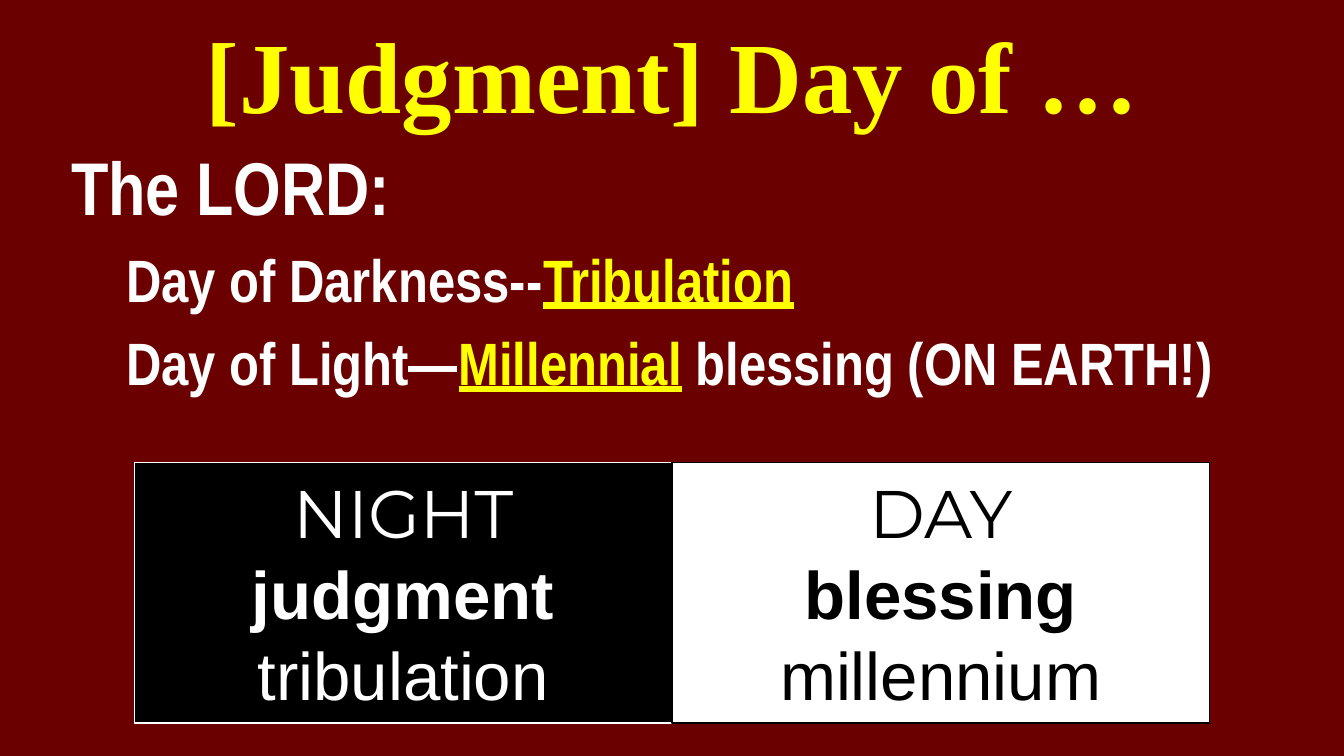
from pptx import Presentation
from pptx.dml.color import RGBColor
from pptx.enum.shapes import MSO_SHAPE
from pptx.enum.text import MSO_ANCHOR, PP_ALIGN
from pptx.util import Inches, Pt

SLIDE_WIDTH = 10
SLIDE_HEIGHT = SLIDE_WIDTH * 9 / 16
BACKGROUND, WHITE, BLACK, YELLOW = "6A0000", "FFFFFF", "000000", "FFFF00"
TITLE = "[Judgment] Day of …"
BODY = [
    (40, 0.1, 0, [("The LORD:", False)]),
    (32, 0.82, -0.31, [("Day of Darkness--", False), ("Tribulation", True)]),
    (32, 0.82, -0.31, [("Day of Light—", False), ("Millennial", True),
                       (" blessing (ON EARTH!)", False)]),
]
PANELS = [
    (BLACK, WHITE, ["NIGHT", "judgment", "tribulation"]),
    (WHITE, BLACK, ["DAY", "blessing", "millennium"]),
]
PANEL_STYLES = [("Montserrat", False), ("Arial", True), ("Arial", False)]
PANEL_LEFT, PANEL_TOP, PANEL_WIDTH, PANEL_HEIGHT = 1, 3.44, 4, 1.94


def color(value):
    return RGBColor.from_string(value)


def format_run(run, font_name, size, font_color, bold, underline=False):
    font = run.font
    font.name = font_name
    font.size = Pt(size)
    font.bold = bold
    font.underline = underline
    font.color.rgb = color(font_color)


def add_text_box(slide, left, top, width, height):
    shape = slide.shapes.add_textbox(
        Inches(left), Inches(top), Inches(width), Inches(height))
    shape.text_frame.word_wrap = True
    return shape.text_frame


def add_title(slide):
    text_frame = add_text_box(slide, 0.25, 0.1, 9.5, 0.89)
    text_frame.vertical_anchor = MSO_ANCHOR.MIDDLE
    text_frame.text = TITLE
    paragraph = text_frame.paragraphs[0]
    paragraph.alignment = PP_ALIGN.CENTER
    format_run(paragraph.runs[0], "Times New Roman", 54, YELLOW, True)


def add_body(slide):
    text_frame = add_text_box(slide, 0.33, 1, 9.42, 4.31)
    for index, (size, margin, indent, parts) in enumerate(BODY):
        paragraph = text_frame.add_paragraph() if index else text_frame.paragraphs[0]
        if index:
            paragraph.level = 1
            paragraph.space_before = Pt(6.4)
        properties = paragraph._p.get_or_add_pPr()
        properties.set("marL", str(Inches(margin)))
        properties.set("indent", str(Inches(indent)))
        for text, highlighted in parts:
            run = paragraph.add_run()
            run.text = text
            format_run(run, "Arial Narrow", size,
                       YELLOW if highlighted else WHITE, True, highlighted)


def add_panel(slide, column, fill_color, text_color, lines):
    shape = slide.shapes.add_shape(
        MSO_SHAPE.RECTANGLE, Inches(PANEL_LEFT + column * PANEL_WIDTH),
        Inches(PANEL_TOP), Inches(PANEL_WIDTH), Inches(PANEL_HEIGHT))
    shape.shadow.inherit = False
    shape.fill.solid()
    shape.fill.fore_color.rgb = color(fill_color)
    shape.line.color.rgb = color(text_color)
    shape.line.width = Pt(0.75)
    text_frame = shape.text_frame
    text_frame.word_wrap = False
    text_frame.vertical_anchor = MSO_ANCHOR.MIDDLE
    text_frame.text = "\n".join(lines)
    for paragraph, (font_name, bold) in zip(text_frame.paragraphs, PANEL_STYLES):
        paragraph.alignment = PP_ALIGN.CENTER
        format_run(paragraph.runs[0], font_name, 36, text_color, bold)


def main():
    presentation = Presentation()
    presentation.slide_width = Inches(SLIDE_WIDTH)
    presentation.slide_height = Inches(SLIDE_HEIGHT)
    slide = presentation.slides.add_slide(presentation.slide_layouts[6])
    slide.background.fill.solid()
    slide.background.fill.fore_color.rgb = color(BACKGROUND)
    add_title(slide)
    add_body(slide)
    for column, panel in enumerate(PANELS):
        add_panel(slide, column, *panel)
    presentation.save("out.pptx")


if __name__ == "__main__":
    main()
